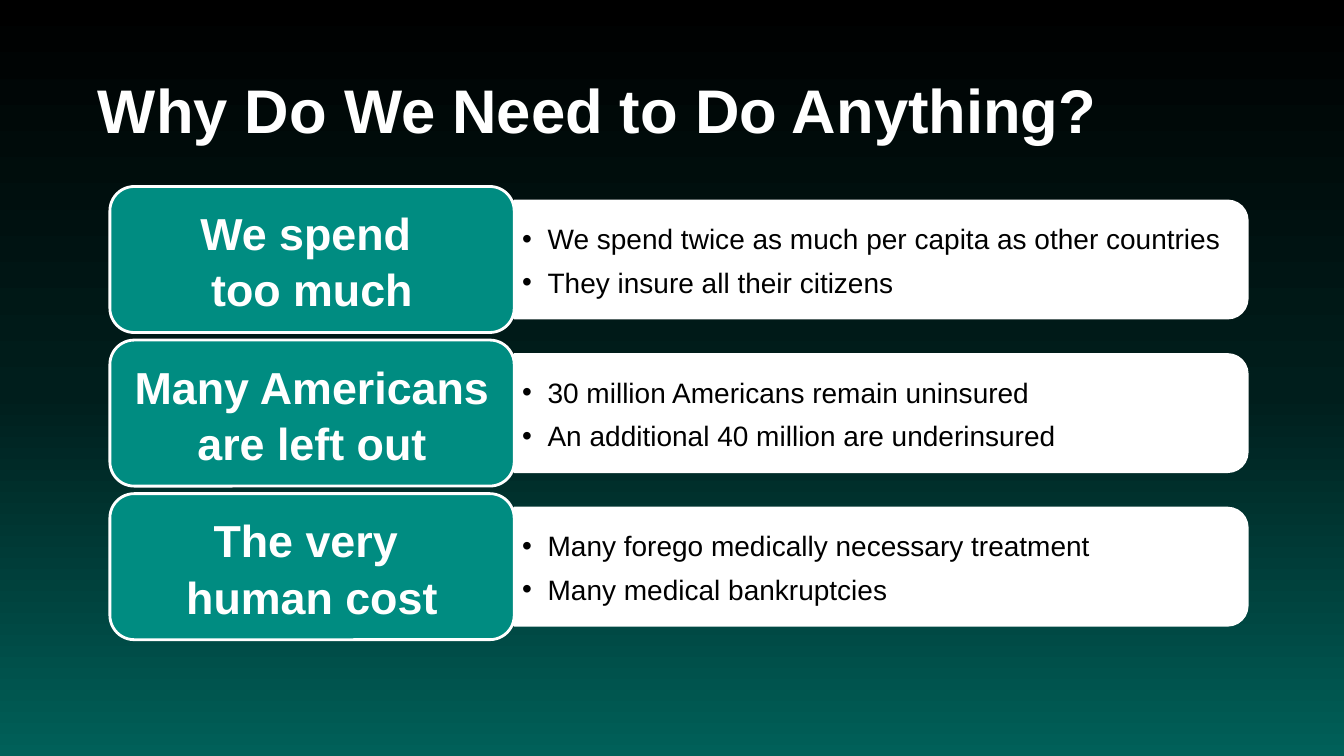
from copy import deepcopy
from dataclasses import dataclass

from lxml import etree
from pptx import Presentation
from pptx.dml.color import RGBColor
from pptx.enum.shapes import MSO_SHAPE
from pptx.enum.text import MSO_ANCHOR, PP_ALIGN
from pptx.oxml.ns import qn
from pptx.util import Cm, Pt

ROUNDED = MSO_SHAPE.ROUNDED_RECTANGLE
ROUNDED_END = MSO_SHAPE.ROUND_2_SAME_RECTANGLE
MIDDLE = MSO_ANCHOR.MIDDLE
CENTER = PP_ALIGN.CENTER

FONT = "Arial"
COLORS = {
    "white": "FFFFFF",
    "black": "000000",
    "teal": "008C81",
    "sky_middle": "001E1C",
    "sky_bottom": "006059",
}
BACKGROUND_STOPS = [(0, "black"), (0.52, "sky_middle"), (1, "sky_bottom")]

ROW_TOP, ROW_PITCH = 4.7, 3.87
LABEL_LEFT, LABEL_WIDTH, LABEL_HEIGHT = 2.77, 10.19, 3.68
PANEL_LEFT, PANEL_WIDTH, PANEL_HEIGHT = 12.96, 18.47, 2.95
POINTS_WIDTH, POINTS_HEIGHT = 18.34, 2.67
BULLET_INDENT = 0.64
LINE_SPACING = 1.05


@dataclass
class Reason:
    label: list[str]
    points: list[str]


REASONS = [
    Reason(
        ["We spend ", "too much"],
        ["We spend twice as much per capita as other countries",
         "They insure all their citizens"],
    ),
    Reason(
        ["Many Americans are left out"],
        ["30 million Americans remain uninsured",
         "An additional 40 million are underinsured"],
    ),
    Reason(
        ["The very ", "human cost"],
        ["Many forego medically necessary treatment",
         "Many medical bankruptcies"],
    ),
]


def color(name: str) -> RGBColor:
    return RGBColor.from_string(COLORS[name])


def paint_background(page) -> None:
    fill = page.background.fill
    fill.gradient()
    fill.gradient_angle = 270
    stop_list = page.element.find(".//" + qn("a:gsLst"))
    stop_list.insert(1, deepcopy(stop_list[0]))
    for stop, (position, name) in zip(fill.gradient_stops, BACKGROUND_STOPS):
        stop.position = position
        stop.color.rgb = color(name)


def prepare_frame(shape, side: float, end: float):
    """Wrap and centre the text vertically, with insets in centimetres."""
    frame = shape.text_frame
    frame.word_wrap = True
    frame.vertical_anchor = MIDDLE
    frame.margin_left = frame.margin_right = Cm(side)
    frame.margin_top = frame.margin_bottom = Cm(end)
    return frame


def write_paragraphs(frame, lines: list[str], size: int, name: str,
                     bold: bool = False, spacing: float = LINE_SPACING) -> None:
    for index, line in enumerate(lines):
        para = frame.add_paragraph() if index else frame.paragraphs[0]
        para.line_spacing = spacing
        span = para.add_run()
        span.text = line
        span.font.name = FONT
        span.font.size = Pt(size)
        span.font.bold = bold
        span.font.color.rgb = color(name)


def add_bullet(para) -> None:
    properties = para._p.get_or_add_pPr()
    properties.set("marL", str(Cm(BULLET_INDENT)))
    properties.set("indent", str(-Cm(BULLET_INDENT)))
    etree.SubElement(properties, qn("a:buFont"), typeface=FONT)
    etree.SubElement(properties, qn("a:buChar"), char="•")


def add_outlined_shape(page, kind, left: float, top: float, width: float,
                       height: float, fill: str):
    shape = page.shapes.add_shape(kind, Cm(left), Cm(top), Cm(width), Cm(height))
    shape.shadow.inherit = False
    shape.fill.solid()
    shape.fill.fore_color.rgb = color(fill)
    shape.line.color.rgb = color("white")
    shape.line.width = Pt(2)
    return shape


def add_panel(page, middle: float) -> None:
    """Draw the white panel upright, then turn its rounded end to the right."""
    panel = add_outlined_shape(
        page, ROUNDED_END,
        PANEL_LEFT + (PANEL_WIDTH - PANEL_HEIGHT) / 2, middle - PANEL_WIDTH / 2,
        PANEL_HEIGHT, PANEL_WIDTH, "white")
    panel.rotation = 90


def add_points(page, middle: float, points: list[str]) -> None:
    box = page.shapes.add_textbox(
        Cm(PANEL_LEFT), Cm(middle - POINTS_HEIGHT / 2),
        Cm(POINTS_WIDTH), Cm(POINTS_HEIGHT))
    frame = prepare_frame(box, 0.2, 0.1)
    write_paragraphs(frame, points, 20, "black")
    for para in frame.paragraphs:
        para.level = 1
        para.space_after = Pt(6)
        add_bullet(para)


def add_label(page, top: float, lines: list[str]) -> None:
    label = add_outlined_shape(
        page, ROUNDED, LABEL_LEFT, top, LABEL_WIDTH, LABEL_HEIGHT, "teal")
    frame = prepare_frame(label, 0.33, 0.18)
    write_paragraphs(frame, lines, 32, "white", bold=True)
    for para in frame.paragraphs:
        para.alignment = CENTER


def add_title(page, title: str) -> None:
    box = page.shapes.add_textbox(Cm(2.34), Cm(1.02), Cm(29.21), Cm(3.68))
    frame = prepare_frame(box, 0.13, 0.13)
    write_paragraphs(frame, [title], 44, "white", bold=True, spacing=0.9)


def main() -> None:
    deck = Presentation()
    deck.slide_width, deck.slide_height = Cm(33.87), Cm(19.05)
    page = deck.slides.add_slide(deck.slide_layouts[6])
    paint_background(page)
    add_title(page, "Why Do We Need to Do Anything?")
    for index, reason in enumerate(REASONS):
        top = ROW_TOP + index * ROW_PITCH
        middle = top + LABEL_HEIGHT / 2
        add_panel(page, middle)
        add_points(page, middle, reason.points)
        add_label(page, top, reason.label)
    deck.save("out.pptx")


if __name__ == "__main__":
    main()
